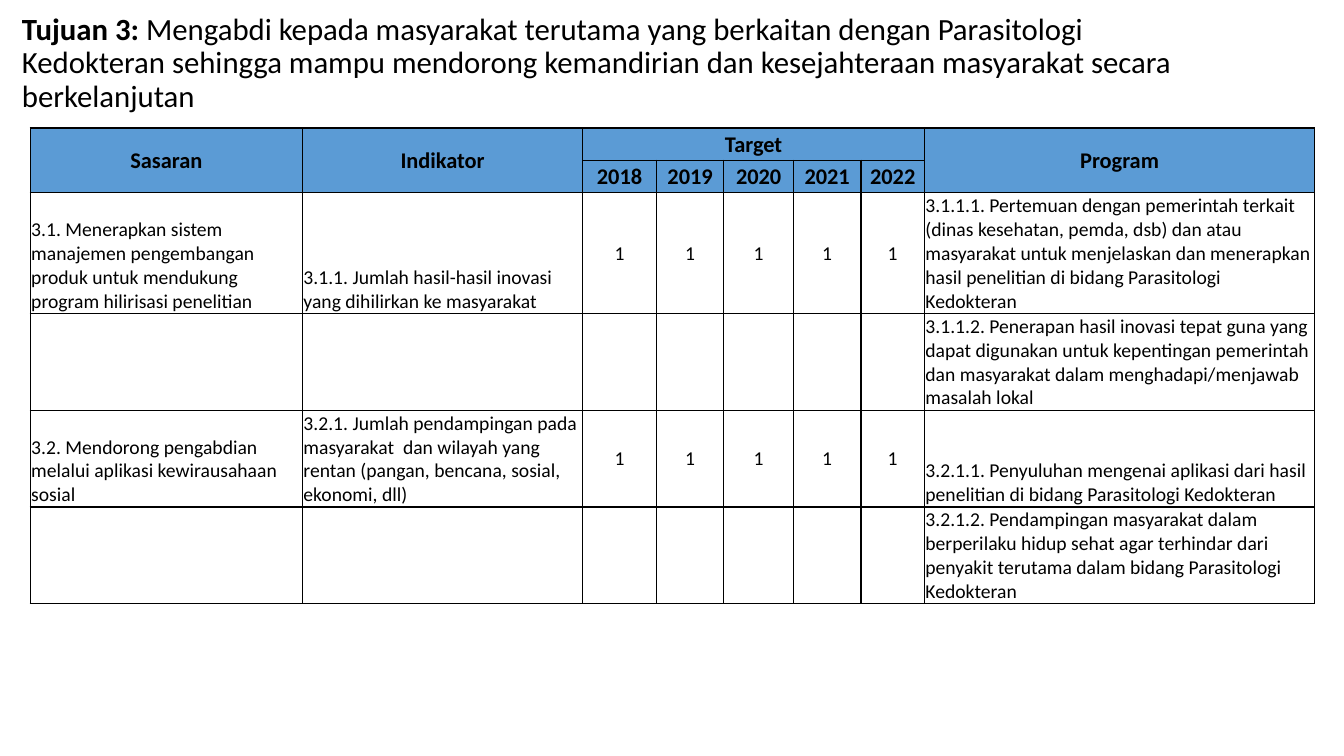
from dataclasses import dataclass

from lxml.etree import SubElement
from pptx import Presentation
from pptx.dml.color import RGBColor
from pptx.enum.text import MSO_ANCHOR as Anchor, PP_ALIGN as Align
from pptx.oxml.ns import qn
from pptx.util import Inches, Pt

COLORS = {"text": "000000", "border": "000000", "header": "5B9BD5"}
FONT = "Calibri"
YEARS = ["2018", "2019", "2020", "2021", "2022"]
COLUMN_WIDTHS = [2.7, 2.78, 0.73, 0.67, 0.69, 0.67, 0.63, 3.87]
HEADER_ROWS = 2
ROW_HEIGHTS = [0.32, 0.32, 1.2, 0.96, 0.96, 0.96]
HEADER_MERGES = [((0, 0), (1, 0)), ((0, 1), (1, 1)), ((0, 2), (0, 6)), ((0, 7), (1, 7))]


@dataclass
class Activity:
    program: str
    goal: str = ""
    indicator: str = ""
    target: str = ""

    def values(self) -> list[str]:
        return [self.goal, self.indicator, *[self.target] * len(YEARS), self.program]


ACTIVITIES = [
    Activity(
        "3.1.1.1. Pertemuan dengan pemerintah terkait (dinas kesehatan, pemda, dsb) dan atau "
        "masyarakat untuk menjelaskan dan menerapkan hasil penelitian di bidang Parasitologi "
        "Kedokteran",
        "3.1. Menerapkan sistem manajemen pengembangan produk untuk mendukung program "
        "hilirisasi penelitian",
        "3.1.1. Jumlah hasil-hasil inovasi yang dihilirkan ke masyarakat",
        "1",
    ),
    Activity(
        "3.1.1.2. Penerapan hasil inovasi tepat guna yang dapat digunakan untuk kepentingan "
        "pemerintah dan masyarakat dalam menghadapi/menjawab masalah lokal"
    ),
    Activity(
        "3.2.1.1. Penyuluhan mengenai aplikasi dari hasil penelitian di bidang Parasitologi "
        "Kedokteran",
        "3.2. Mendorong pengabdian melalui aplikasi kewirausahaan sosial",
        "3.2.1. Jumlah pendampingan pada masyarakat  dan wilayah yang rentan (pangan, bencana, "
        "sosial, ekonomi, dll)",
        "1",
    ),
    Activity(
        "3.2.1.2. Pendampingan masyarakat dalam berperilaku hidup sehat agar terhindar dari "
        "penyakit terutama dalam bidang Parasitologi Kedokteran"
    ),
]


def color(name: str) -> RGBColor:
    return RGBColor.from_string(COLORS[name])


def set_font(font, size: int) -> None:
    font.name = FONT
    font.size = Pt(size)
    font.color.rgb = color("text")


def add_title(page) -> None:
    box = page.shapes.add_textbox(Inches(0.12), Inches(0.18), Inches(12.03), Inches(0.91))
    frame = box.text_frame
    frame.word_wrap = True
    frame.vertical_anchor = Anchor.MIDDLE
    para = frame.paragraphs[0]
    para.line_spacing = 0.9
    set_font(para.font, 22)
    label = para.add_run()
    label.text = "Tujuan 3: "
    label.font.bold = True
    para.add_run().text = (
        "Mengabdi kepada masyarakat terutama yang berkaitan dengan Parasitologi Kedokteran "
        "sehingga mampu mendorong kemandirian dan kesejahteraan masyarakat secara berkelanjutan"
    )


def add_borders(cell) -> None:
    properties = cell._tc.get_or_add_tcPr()
    for position, side in enumerate(("a:lnL", "a:lnR", "a:lnT", "a:lnB")):
        line = SubElement(properties, qn(side), w=str(Pt(1)))
        fill = SubElement(line, qn("a:solidFill"))
        SubElement(fill, qn("a:srgbClr"), val=COLORS["border"])
        properties.insert(position, line)


def fill_cell(cell, text: str, header: bool, centered: bool) -> None:
    cell.margin_left = cell.margin_right = cell.margin_top = Inches(0.01)
    cell.margin_bottom = 0
    cell.vertical_anchor = Anchor.MIDDLE if centered else Anchor.BOTTOM
    cell.text = text
    para = cell.text_frame.paragraphs[0]
    para.alignment = Align.CENTER if centered else Align.LEFT
    set_font(para.font, 16 if header else 14)
    para.font.bold = header
    if header:
        cell.fill.solid()
        cell.fill.fore_color.rgb = color("header")
    else:
        cell.fill.background()
    add_borders(cell)


def add_targets_table(page) -> None:
    rows = [
        ["Sasaran", "Indikator", "Target", "", "", "", "", "Program"],
        ["", "", *YEARS, ""],
        *[activity.values() for activity in ACTIVITIES],
    ]
    table = page.shapes.add_table(
        len(rows), len(COLUMN_WIDTHS), Inches(0.3), Inches(1.27),
        Inches(sum(COLUMN_WIDTHS)), Inches(sum(ROW_HEIGHTS)),
    ).table
    table.first_row = table.horz_banding = False
    for column, width in zip(table.columns, COLUMN_WIDTHS):
        column.width = Inches(width)
    for row, height in zip(table.rows, ROW_HEIGHTS):
        row.height = Inches(height)
    for row_index, values in enumerate(rows):
        header = row_index < HEADER_ROWS
        for column_index, text in enumerate(values):
            centered = header or 2 <= column_index < 2 + len(YEARS)
            fill_cell(table.cell(row_index, column_index), text, header, centered)
    for first, last in HEADER_MERGES:
        table.cell(*first).merge(table.cell(*last))


def main() -> None:
    deck = Presentation()
    deck.slide_width = Inches(13.33)
    deck.slide_height = Inches(7.5)
    page = deck.slides.add_slide(deck.slide_layouts[6])
    # Goal statement
    add_title(page)
    # Goals, indicators, yearly targets and programs
    add_targets_table(page)
    deck.save("out.pptx")


if __name__ == "__main__":
    main()
